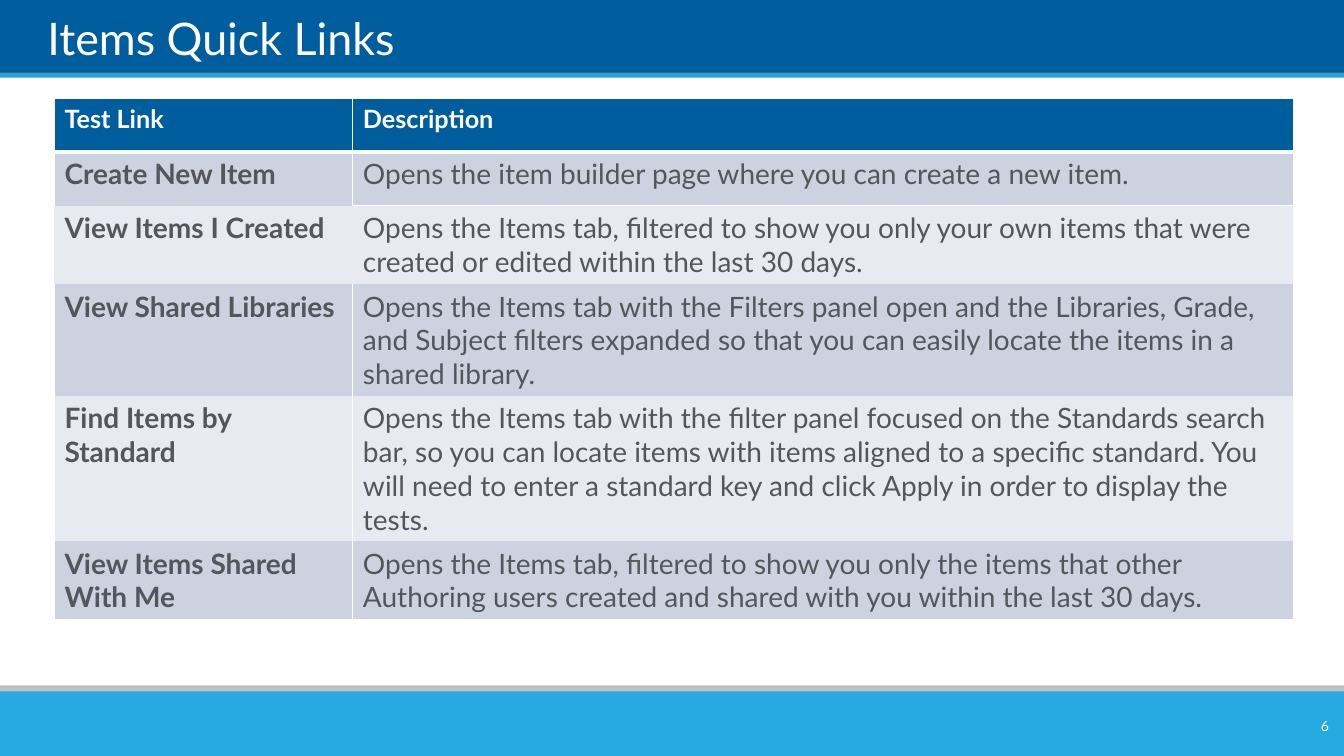
from dataclasses import dataclass

import pptx
import pptx.dml.color
import pptx.enum.shapes
import pptx.enum.text
import pptx.oxml
import pptx.oxml.ns
import pptx.util

Inches = pptx.util.Inches
ALIGN = pptx.enum.text.PP_ALIGN
ANCHOR = pptx.enum.text.MSO_ANCHOR


@dataclass(frozen=True)
class Theme:
    font: str = "Lato"
    navy: str = "005E9E"
    sky: str = "35A0CE"
    gray: str = "BFBFBF"
    cyan: str = "27AAE1"
    white: str = "FFFFFF"
    body: str = "53565A"
    dark_band: str = "CCD2DF"
    light_band: str = "E7EAF0"
    title_size: int = 32
    header_size: int = 18
    body_size: int = 20
    number_size: int = 10
    thin: int = 1
    thick: int = 3


@dataclass(frozen=True)
class Bar:
    top: float
    height: float
    color: str


@dataclass(frozen=True)
class Row:
    height: float
    link: str
    description: str
    link_sides: str = "LRB"  # sides of the link cell that have a border
    description_sides: str = "LRB"


T = Theme()

BARS = [
    Bar(-0.01, 0.75, T.navy),
    Bar(0.72, 0.05, T.sky),
    Bar(6.8, 0.14, T.gray),
    Bar(6.86, 0.64, T.cyan),
]

COLUMNS = [2.96, 9.33]
ROWS = [
    Row(0.53, "Test Link", "Description", "LTRB", "LTRB"),
    Row(0.53, "Create New Item",
        "Opens the item builder page where you can create a new item.",
        "LTR", "LTR"),
    Row(0.78, "View Items I Created",
        "Opens the Items tab, filtered to show you only your own items that "
        "were created or edited within the last 30 days.",
        "", "TRB"),
    Row(1.11, "View Shared Libraries",
        "Opens the Items tab with the Filters panel open and the Libraries, "
        "Grade, and Subject filters expanded so that you can easily locate "
        "the items in a shared library."),
    Row(1.44, "Find Items by Standard",
        "Opens the Items tab with the filter panel focused on the Standards "
        "search bar, so you can locate items with items aligned to a specific "
        "standard. You will need to enter a standard key and click Apply in "
        "order to display the tests."),
    Row(0.78, "View Items Shared With Me",
        "Opens the Items tab, filtered to show you only the items that other "
        "Authoring users created and shared with you within the last 30 days."),
]


def rgb(color: str) -> pptx.dml.color.RGBColor:
    return pptx.dml.color.RGBColor.from_string(color)


def add_run(p, text: str, size: int, color: str, bold: bool = False) -> None:
    r = p.add_run()
    r.text = text
    r.font.name = T.font
    r.font.size = pptx.util.Pt(size)
    r.font.color.rgb = rgb(color)
    r.font.bold = bold


def add_bar(s, bar: Bar) -> None:
    sp = s.shapes.add_shape(
        pptx.enum.shapes.MSO_SHAPE.RECTANGLE,
        0, Inches(bar.top), Inches(13.33), Inches(bar.height))
    sp.shadow.inherit = False
    sp.fill.solid()
    sp.fill.fore_color.rgb = rgb(bar.color)
    sp.line.fill.background()


def add_title(s, text: str) -> None:
    sp = s.shapes.title
    s.shapes._spTree.append(sp._element)  # bring in front of the bars
    sp.left, sp.top = Inches(0.47), Inches(0.07)
    sp.width, sp.height = Inches(12.43), Inches(0.57)
    tf = sp.text_frame
    tf.margin_left = tf.margin_top = tf.margin_right = tf.margin_bottom = 0
    tf.vertical_anchor = ANCHOR.BOTTOM
    tf.auto_size = pptx.enum.text.MSO_AUTO_SIZE.NONE
    p = tf.paragraphs[0]
    p.alignment = ALIGN.LEFT
    add_run(p, text, T.title_size, T.white)


def set_borders(cell, sides: str, widths: dict[str, int]) -> None:
    props = cell._tc.get_or_add_tcPr()
    for i, side in enumerate("LRTB"):
        width = pptx.util.Pt(widths.get(side, T.thin))
        paint = (f'<a:solidFill><a:srgbClr val="{T.white}"/></a:solidFill>'
                 if side in sides else "<a:noFill/>")
        props.insert(i, pptx.oxml.parse_xml(
            f'<a:ln{side} {pptx.oxml.ns.nsdecls("a")} w="{width}">'
            f"{paint}</a:ln{side}>"))


def add_links_table(s, rows: list[Row]) -> None:
    table = s.shapes.add_table(
        len(rows), len(COLUMNS), Inches(0.54), Inches(0.98),
        Inches(sum(COLUMNS)), Inches(sum(row.height for row in rows))).table
    for column, width in zip(table.columns, COLUMNS):
        column.width = Inches(width)
    for i, row in enumerate(rows):
        table.rows[i].height = Inches(row.height)
        header = i == 0
        band = T.dark_band if i % 2 else T.light_band
        widths = {0: {"B": T.thick}, 1: {"T": T.thick}}.get(i, {})
        contents = [(row.link, row.link_sides),
                    (row.description, row.description_sides)]
        for j, (text, sides) in enumerate(contents):
            cell = table.cell(i, j)
            cell.fill.solid()
            cell.fill.fore_color.rgb = rgb(T.navy if header else band)
            set_borders(cell, sides, widths)
            add_run(cell.text_frame.paragraphs[0], text,
                    T.header_size if header else T.body_size,
                    T.white if header else T.body,
                    bold=header or j == 0)


def add_slide_number(s, number: str) -> None:
    sp = s.shapes.add_textbox(
        Inches(12.51), Inches(7.05), Inches(0.77), Inches(0.3))
    tf = sp.text_frame
    tf.word_wrap = True
    tf.vertical_anchor = ANCHOR.MIDDLE
    p = tf.paragraphs[0]
    p.alignment = ALIGN.RIGHT
    add_run(p, number, T.number_size, T.white)


def main() -> None:
    prs = pptx.Presentation()
    prs.slide_width, prs.slide_height = Inches(13.33), Inches(7.5)
    s = prs.slides.add_slide(prs.slide_layouts[5])

    # Header and footer bars
    for bar in BARS:
        add_bar(s, bar)

    # Title, table and slide number
    add_title(s, "Items Quick Links")
    add_links_table(s, ROWS)
    add_slide_number(s, "6")

    prs.save("out.pptx")


if __name__ == "__main__":
    main()
